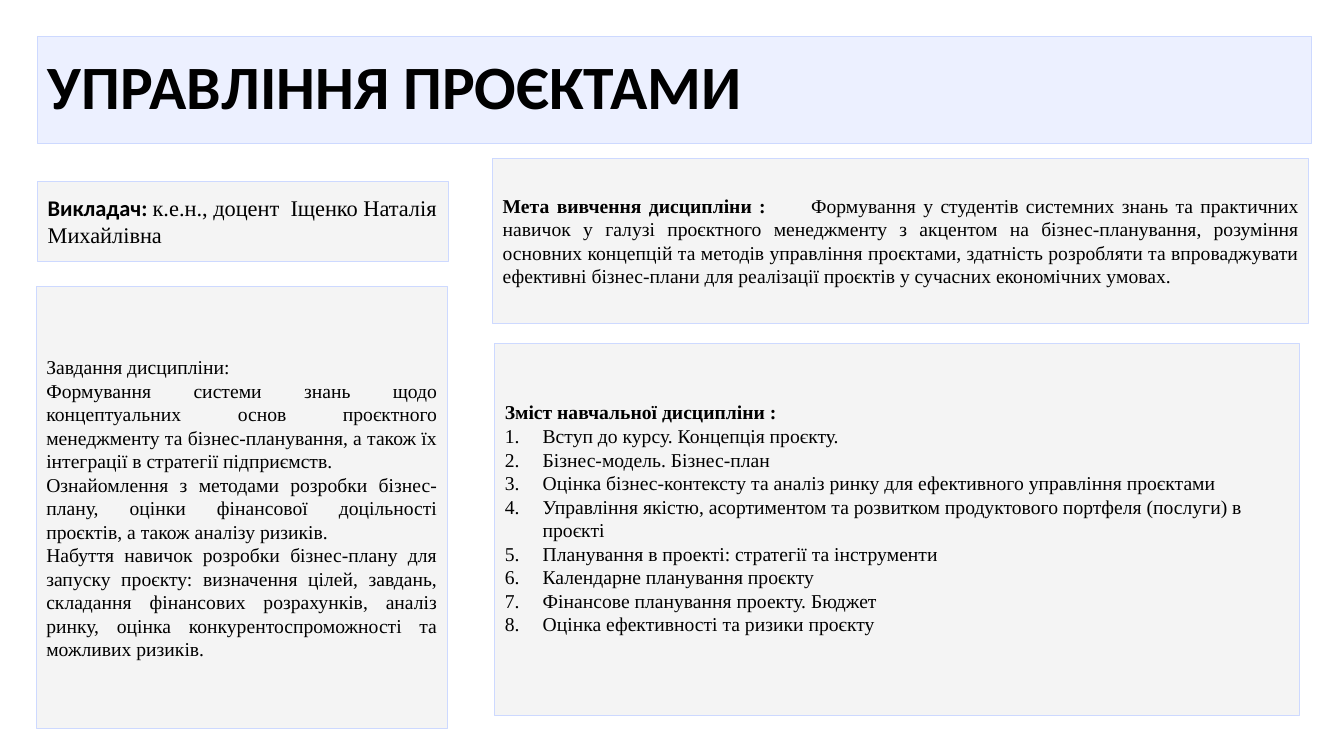
from dataclasses import dataclass

from lxml.etree import SubElement
from pptx import Presentation
from pptx.dml.color import RGBColor
from pptx.enum.shapes import MSO_SHAPE
from pptx.enum.text import MSO_ANCHOR, PP_ALIGN
from pptx.oxml.ns import qn
from pptx.util import Pt


@dataclass(frozen=True)
class Theme:
    """Keep the colours, fonts and sizes of the slide."""
    ink: str = "000000"
    edge: str = "CDD9FF"
    blue: str = "E5EBFF"
    gray: str = "F0F0F0"
    sans: str = "Calibri"
    serif: str = "Times New Roman"
    head: float = 44
    lead: float = 16
    body: float = 14


THEME = Theme()
TASKS = [
    "Завдання дисципліни:",
    "Формування системи знань щодо концептуальних основ проєктного менеджменту та бізнес-планування, "
    "а також їх інтеграції в стратегії підприємств.",
    "Ознайомлення з методами розробки бізнес-плану, оцінки фінансової доцільності проєктів, "
    "а також аналізу ризиків.",
    "Набуття навичок розробки бізнес-плану для запуску проєкту: визначення цілей, завдань, "
    "складання фінансових розрахунків, аналіз ринку, оцінка конкурентоспроможності та можливих ризиків.",
]
TOPICS = [
    "Вступ до курсу. Концепція проєкту.",
    "Бізнес-модель. Бізнес-план",
    "Оцінка бізнес-контексту та аналіз ринку для ефективного управління проєктами",
    "Управління якістю, асортиментом та розвитком продуктового портфеля (послуги) в проєкті",
    "Планування в проекті: стратегії та інструменти",
    "Календарне планування проєкту",
    "Фінансове планування проекту. Бюджет",
    "Оцінка ефективності та ризики проєкту",
]
GOAL = (
    "Формування у студентів системних знань та практичних навичок у галузі проєктного менеджменту "
    "з акцентом на бізнес-планування, розуміння основних концепцій та методів управління проєктами, "
    "здатність розробляти та впроваджувати ефективні бізнес-плани для реалізації проєктів "
    "у сучасних економічних умовах."
)


def panel(slide, box, fill=THEME.gray, alpha=69):
    """Draw a tinted panel and return its text frame."""
    shape = slide.shapes.add_shape(MSO_SHAPE.RECTANGLE, *map(Pt, box))
    shape.shadow.inherit = False
    shape.fill.solid()
    shape.fill.fore_color.rgb = RGBColor.from_string(fill)
    tint = shape.fill._xPr.find(qn("a:solidFill"))[0]
    SubElement(tint, qn("a:alpha"), val=str(alpha * 1000))
    shape.line.color.rgb = RGBColor.from_string(THEME.edge)
    shape.line.width = Pt(0.75)
    frame = shape.text_frame
    frame.word_wrap = True
    frame.vertical_anchor = MSO_ANCHOR.MIDDLE
    return frame


def style(run, size=THEME.body, face=THEME.serif, bold=False):
    """Set the font of a run."""
    font = run.font
    font.size, font.name, font.bold = Pt(size), face, bold
    font.color.rgb = RGBColor.from_string(THEME.ink)


def write(frame, lines, align):
    """Fill a frame with one paragraph for each line."""
    frame.text = "\n".join(lines)
    for para in frame.paragraphs:
        para.alignment = align
        style(para.runs[0])


def label(para, term, text, size, face):
    """Write a bold term with plain text after it."""
    for words, font, bold in ((term, face, True), (text, THEME.serif, False)):
        run = para.add_run()
        run.text = words
        style(run, size, font, bold)


def banner(slide, box):
    """Place the course title."""
    frame = panel(slide, box, THEME.blue, 70)
    frame.text = "УПРАВЛІННЯ ПРОЄКТАМИ"
    para = frame.paragraphs[0]
    para.alignment = PP_ALIGN.LEFT
    para.line_spacing = 0.9
    style(para.runs[0], THEME.head, THEME.sans, True)


def tutor(slide, box):
    """Place the name of the lecturer."""
    para = panel(slide, box).paragraphs[0]
    para.alignment = PP_ALIGN.LEFT
    label(para, "Викладач: ", "к.е.н., доцент  Іщенко Наталія Михайлівна", THEME.lead, THEME.sans)


def tasks(slide, box):
    """Place the tasks of the course."""
    write(panel(slide, box), TASKS, PP_ALIGN.JUSTIFY)


def goal(slide, box):
    """Place the goal, with a tab stop after its term."""
    para = panel(slide, box).paragraphs[0]
    para.alignment = PP_ALIGN.JUSTIFY
    tabs = SubElement(para._p.get_or_add_pPr(), qn("a:tabLst"))
    SubElement(tabs, qn("a:tab"), pos=str(Pt(215)), algn="l")
    label(para, "Мета вивчення дисципліни :\t", GOAL, THEME.body, THEME.serif)


def topics(slide, box):
    """Place the numbered topics, set a little above the middle."""
    frame = panel(slide, box)
    frame.margin_bottom = Pt(20)
    write(frame, ["Зміст навчальної дисципліни :", *TOPICS], PP_ALIGN.LEFT)
    first, *items = frame.paragraphs
    first.runs[0].font.bold = True
    for para in items:
        props = para._p.get_or_add_pPr()
        props.set("marL", str(Pt(27)))
        props.set("indent", str(-Pt(27)))
        SubElement(props, qn("a:buFont"), typeface=THEME.serif)
        SubElement(props, qn("a:buAutoNum"), type="arabicPeriod")


def main():
    """Build and save the slide."""
    deck = Presentation()
    deck.slide_width, deck.slide_height = Pt(960), Pt(540)
    slide = deck.slides.add_slide(deck.slide_layouts[6])
    banner(slide, (27, 26, 910, 76.5))
    topics(slide, (353.5, 245.5, 574.5, 265.5))
    tutor(slide, (27, 129.5, 293.5, 57.5))
    tasks(slide, (26, 205, 293.5, 315.5))
    goal(slide, (352, 113, 583, 118))
    deck.save("out.pptx")


if __name__ == "__main__":
    main()
